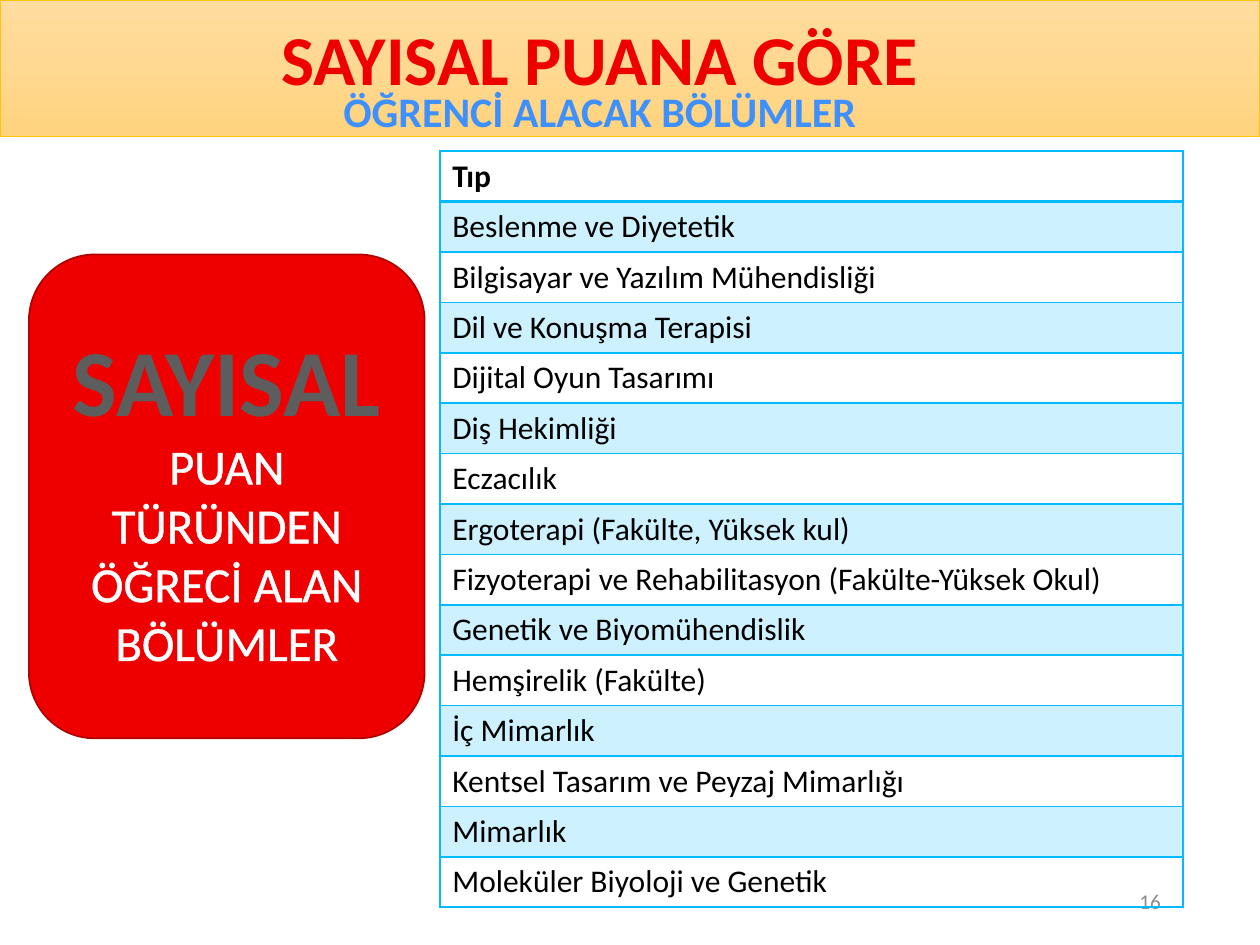
from lxml import etree
from pptx import Presentation
from pptx.dml.color import RGBColor
from pptx.enum.shapes import MSO_SHAPE as Shape
from pptx.enum.text import MSO_ANCHOR as Anchor, PP_ALIGN as Align
from pptx.oxml import parse_xml
from pptx.oxml.ns import nsdecls, qn
from pptx.util import Inches, Pt

FONT = "Calibri"
RED, BLUE, WHITE = "EF0000", "05BBFF", "FFFFFF"
ROWS = [
    "Tıp",
    "Beslenme ve Diyetetik",
    "Bilgisayar ve Yazılım Mühendisliği",
    "Dil ve Konuşma Terapisi",
    "Dijital Oyun Tasarımı",
    "Diş Hekimliği",
    "Eczacılık",
    "Ergoterapi (Fakülte, Yüksek kul)",
    "Fizyoterapi ve Rehabilitasyon (Fakülte-Yüksek Okul)",
    "Genetik ve Biyomühendislik",
    "Hemşirelik (Fakülte)",
    "İç Mimarlık",
    "Kentsel Tasarım ve Peyzaj Mimarlığı",
    "Mimarlık",
    "Moleküler Biyoloji ve Genetik",
]


def color(code):
    return RGBColor.from_string(code)


def grad(stops):
    """Return a top-to-bottom gradient fill from (percent, colour) pairs."""
    marks = "".join(
        f'<a:gs pos="{pos * 1000}"><a:srgbClr val="{code}"/></a:gs>'
        for pos, code in stops)
    return parse_xml(
        f'<a:gradFill {nsdecls("a")} rotWithShape="1"><a:gsLst>{marks}</a:gsLst>'
        '<a:lin ang="5400000" scaled="0"/></a:gradFill>')


def line(tag, code, width):
    """Return a solid line element, for a text outline or a cell border."""
    return parse_xml(
        f'<a:{tag} {nsdecls("a")} w="{Pt(width)}"><a:solidFill>'
        f'<a:srgbClr val="{code}"/></a:solidFill></a:{tag}>')


def add_run(para, text, size, fill, bold=False, edge=None):
    """Add a run; fill is a colour or gradient stops, edge an outline width."""
    run = para.add_run()
    run.text = text
    font = run.font
    font.name, font.size, font.bold = FONT, Pt(size), bold
    if isinstance(fill, str):
        font.color.rgb = color(fill)
    else:
        font._element.insert(0, grad(fill))
    if edge:
        font._element.insert(0, line("ln", WHITE, edge))


def add_box(slide, kind, box, fill, edge, width):
    shape = slide.shapes.add_shape(kind, *map(Inches, box))
    shape.shadow.inherit = False
    shape.line.color.rgb = color(edge)
    shape.line.width = Pt(width)
    if isinstance(fill, str):
        shape.fill.solid()
        shape.fill.fore_color.rgb = color(fill)
    else:
        shape.fill.background()
        props = shape._element.spPr
        props.replace(props.find(qn("a:noFill")), grad(fill))
    return shape


def add_text(slide, box, align, text, size, fill, bold=False, anchor=Anchor.TOP):
    frame = slide.shapes.add_textbox(*map(Inches, box)).text_frame
    frame.word_wrap = True
    frame.vertical_anchor = anchor
    para = frame.paragraphs[0]
    para.alignment = align
    add_run(para, text, size, fill, bold)


def add_card(slide, box):
    card = add_box(slide, Shape.ROUNDED_RECTANGLE, box, RED, "B10000", 1)
    frame = card.text_frame
    frame.word_wrap = True
    frame.vertical_anchor = Anchor.MIDDLE
    para = frame.paragraphs[0]
    para.alignment = Align.CENTER
    shades = [(0, "555555"), (49, "5D5D5D"), (50, "000000"),
              (95, "000000"), (100, "000000")]
    add_run(para, "SAYISAL", 54, shades, True, 1.4)
    add_run(para, " PUAN TÜRÜNDEN ÖĞRECİ ALAN BÖLÜMLER", 28, WHITE, edge=1.45)


def add_header(slide, box):
    x, y, w, h = box
    band = [(0, "FFDD9F"), (50, "FFD891"), (100, "FFD37D")]
    add_box(slide, Shape.RECTANGLE, box, band, "FFC30B", 0.5)
    add_text(slide, (x - 0.18, y + 0.07, w, h + 0.1), Align.CENTER,
             "SAYISAL PUANA GÖRE ", 40, RED, True)
    blues = [(0, "004577"), (78, "3F90FF"), (100, "EFF4FF")]
    add_text(slide, (x + 0.27, y + 0.63, w - 1.02, 0.5), Align.CENTER,
             "ÖĞRENCİ ALACAK BÖLÜMLER", 24, blues, True)


def style_cell(cell, text, row):
    cell.margin_top = cell.margin_bottom = Inches(0.04)
    cell.vertical_anchor = Anchor.MIDDLE
    add_run(cell.text_frame.paragraphs[0], text, 18, "000000", row == 0)
    if row % 2:
        cell.fill.solid()
        cell.fill.fore_color.rgb = color(BLUE)
        tint = next(cell._tc.tcPr.iter(qn("a:srgbClr")))
        etree.SubElement(tint, qn("a:alpha"), val="20000")
    else:
        cell.fill.background()
    widths = {"lnL": 1, "lnR": 1, "lnT": 2 if row == 1 else 1,
              "lnB": 2 if row == 0 else 1}
    for spot, (tag, width) in enumerate(widths.items()):
        cell._tc.tcPr.insert(spot, line(tag, BLUE, width))


def add_list(slide, box):
    table = slide.shapes.add_table(len(ROWS), 1, *map(Inches, box)).table
    for row, text in enumerate(ROWS):
        table.rows[row].height = Inches(box[3] / len(ROWS))
        style_cell(table.cell(row, 0), text, row)


def main():
    deck = Presentation()
    deck.slide_width, deck.slide_height = Inches(10), Inches(7.5)
    slide = deck.slides.add_slide(deck.slide_layouts[6])
    add_card(slide, (0.23, 2.02, 3.14, 3.84))
    add_header(slide, (0, 0, 10, 1.08))
    add_text(slide, (7.06, 6.95, 2.25, 0.4), Align.RIGHT, "16", 12, "8C8C8C",
             anchor=Anchor.MIDDLE)
    add_list(slide, (3.49, 1.2, 5.9, 6))
    deck.save("out.pptx")


if __name__ == "__main__":
    main()
